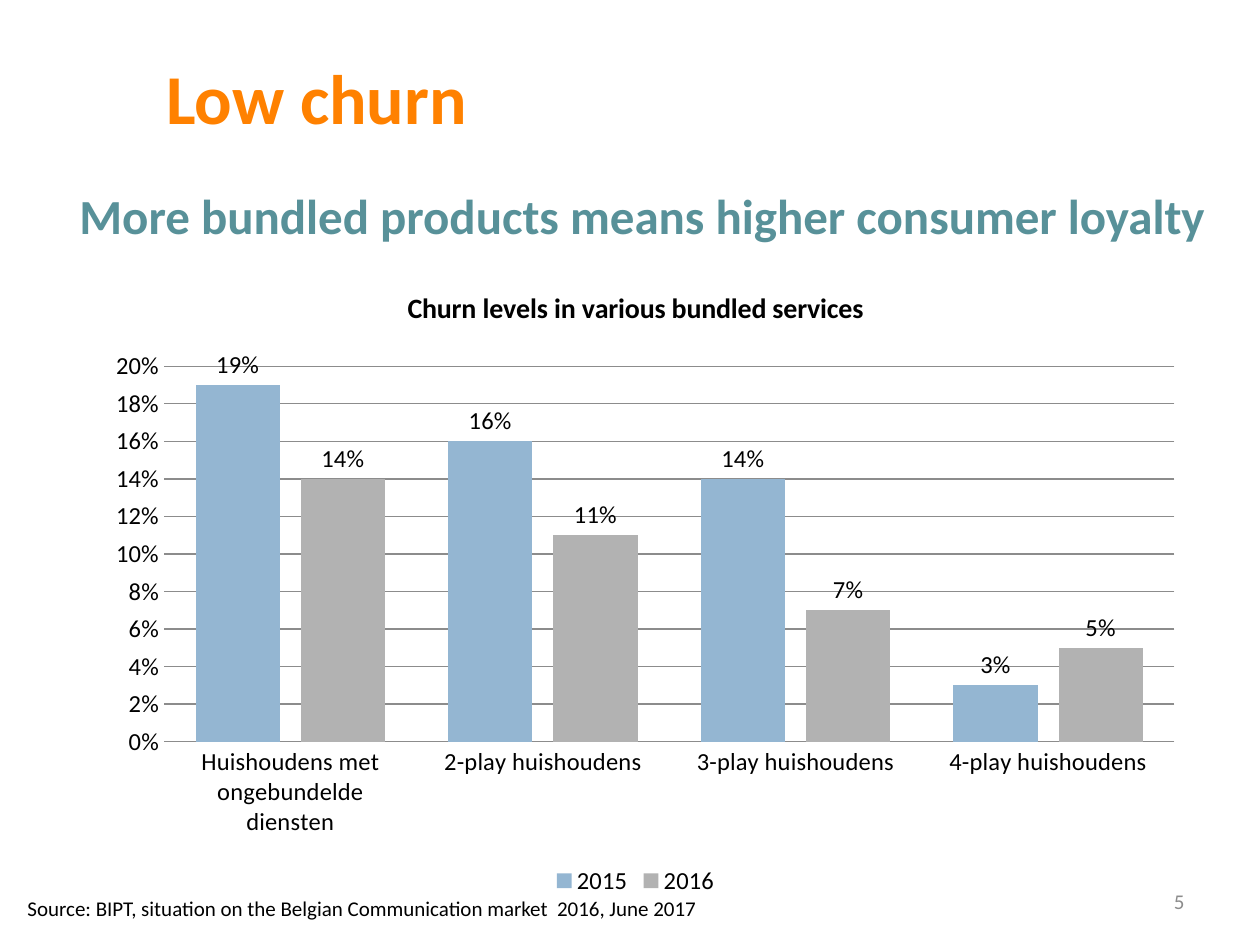
"""Build the slide on low churn among bundled services."""
from lxml import etree
from pptx import Presentation
from pptx.chart.data import CategoryChartData
from pptx.dml.color import RGBColor
from pptx.enum.chart import XL_CHART_TYPE, XL_LABEL_POSITION, XL_LEGEND_POSITION, XL_TICK_MARK
from pptx.enum.text import MSO_ANCHOR, PP_ALIGN
from pptx.util import Inches, Pt

COLUMN = XL_CHART_TYPE.COLUMN_CLUSTERED
OUTSIDE = XL_LABEL_POSITION.OUTSIDE_END
BELOW = XL_LEGEND_POSITION.BOTTOM
NO_TICK = XL_TICK_MARK.NONE
TOP, MIDDLE, BOTTOM = MSO_ANCHOR.TOP, MSO_ANCHOR.MIDDLE, MSO_ANCHOR.BOTTOM
LEFT, RIGHT = PP_ALIGN.LEFT, PP_ALIGN.RIGHT
FONT = "Calibri"
HUES = {"title": "FF8100", "lead": "589199", "text": "000000", "page": "8C8C8C",
        "grid": "8C8C8C", "2015": "94B6D2", "2016": "B2B2B2"}


def style(font, size, hue, bold=False):
    font.name, font.size, font.bold = FONT, Pt(size), bold
    font.color.rgb = RGBColor.from_string(HUES[hue])


def write(box, text, size, hue, bold=False, anchor=TOP, align=LEFT, inset=None):
    frame = box.text_frame
    frame.word_wrap = True
    frame.vertical_anchor = anchor
    if inset is not None:
        frame.margin_left = frame.margin_right = Inches(inset)
        frame.margin_top = frame.margin_bottom = Inches(inset)
    frame.text = text
    para = frame.paragraphs[0]
    para.alignment = align
    style(para.runs[0].font, size, hue, bold)


deck = Presentation()
deck.slide_width, deck.slide_height = Inches(10), Inches(7.5)
slide = deck.slides.add_slide(deck.slide_layouts[5])
shapes = slide.shapes

title = shapes.title
title.left, title.top = Inches(1.28), Inches(-0.11)
title.width, title.height = Inches(9.24), Inches(1.25)
write(title, "Low churn", 40, "title", True, BOTTOM, inset=0.04)

source = shapes.add_textbox(Inches(0.12), Inches(7.06), Inches(6.54), Inches(0.3))
write(source, "Source: BIPT, situation on the Belgian Communication market  2016, June 2017",
      12, "text")

data = CategoryChartData(number_format="0%")
data.categories = ["Huishoudens met ongebundelde diensten", "2-play huishoudens",
                   "3-play huishoudens", "4-play huishoudens"]
data.add_series("2015", [0.19, 0.16, 0.14, 0.03])
data.add_series("2016", [0.14, 0.11, 0.07, 0.05])
chart = shapes.add_chart(COLUMN, Inches(0.59), Inches(2.1), Inches(8.91), Inches(5.05),
                         data).chart
style(chart.font, 14, "text")

chart.has_title = True
head = chart.chart_title.text_frame
head.text = "Churn levels in various bundled services"
style(head.paragraphs[0].runs[0].font, 16, "text", True)
chart.chart_title.include_in_layout = False

chart.has_legend = True
chart.legend.position = BELOW
chart.legend.include_in_layout = False

plot = chart.plots[0]
plot.gap_width, plot.overlap = 75, -25
plot.vary_by_categories = False
for series in plot.series:
    series.format.fill.solid()
    series.format.fill.fore_color.rgb = RGBColor.from_string(HUES[series.name])
    labels = series.data_labels
    labels.show_value = True
    labels.number_format, labels.number_format_is_linked = "0%", False
    labels.position = OUTSIDE
    style(labels.font, 14, "text")

cats, vals = chart.category_axis, chart.value_axis
for axis in (cats, vals):
    axis.major_tick_mark = axis.minor_tick_mark = NO_TICK
vals.minimum_scale, vals.maximum_scale, vals.major_unit = 0, 0.2, 0.02
vals.tick_labels.number_format = "0%"
vals.tick_labels.number_format_is_linked = False
vals.format.line.fill.background()
vals.has_major_gridlines = True
for line in (cats.format.line, vals.major_gridlines.format.line):
    line.color.rgb = RGBColor.from_string(HUES["grid"])
    line.width = Pt(0.75)

area = chart.element.find(".//{*}plotArea")
space = "{" + etree.QName(area).namespace + "}"
for old in area.findall(space + "layout"):
    area.remove(old)
layout = etree.Element(space + "layout")
area.insert(0, layout)
manual = etree.SubElement(layout, space + "manualLayout")
for tag, val in (("layoutTarget", "inner"), ("xMode", "edge"), ("yMode", "edge"),
                 ("x", "0.08"), ("y", "0.16"), ("w", "0.9"), ("h", "0.59")):
    etree.SubElement(manual, space + tag, val=val)

page = shapes.add_textbox(Inches(7.17), Inches(6.95), Inches(2.33), Inches(0.4))
write(page, "5", 12, "page", anchor=MIDDLE, align=RIGHT)

lead = shapes.add_textbox(Inches(0.59), Inches(1.04), Inches(9.28), Inches(0.94))
write(lead, "More bundled products means higher consumer loyalty", 28, "lead", True,
      BOTTOM, inset=0.04)

deck.save("out.pptx")
